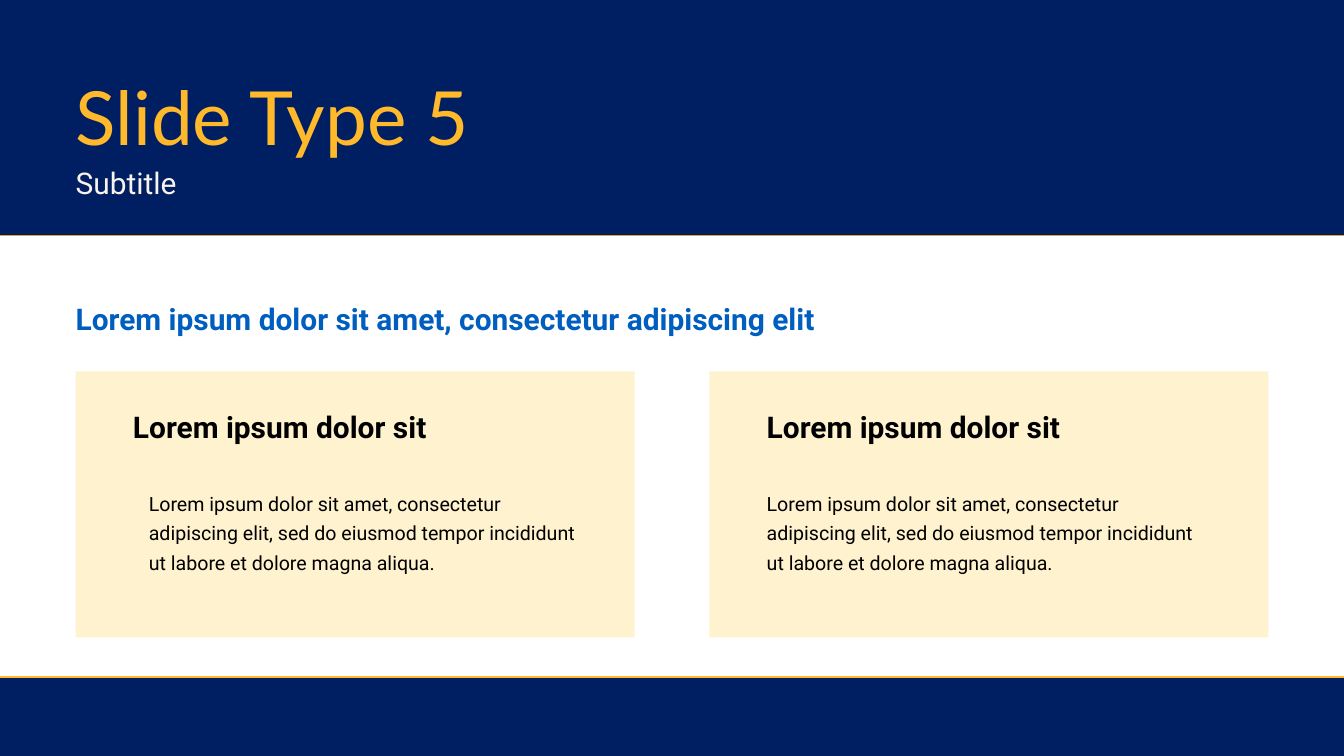
from pptx import Presentation
from pptx.dml.color import RGBColor
from pptx.enum.shapes import MSO_CONNECTOR, MSO_SHAPE
from pptx.enum.text import MSO_ANCHOR, MSO_AUTO_SIZE, PP_ALIGN
from pptx.oxml.ns import qn
from pptx.util import Pt
from lxml.etree import SubElement

NAVY = RGBColor(0x00, 0x1F, 0x63)
GOLD = RGBColor(0xFF, 0xB9, 0x2A)
CREAM = RGBColor(0xFF, 0xF2, 0xCE)
BLUE = RGBColor(0x00, 0x5F, 0xBE)
PALE = RGBColor(0xF8, 0xF4, 0xEB)
BLACK = RGBColor(0x00, 0x00, 0x00)

WIDTH, HEIGHT = 1440, 810
MARGIN, GAP = 81, 80
INNER = WIDTH - 2 * MARGIN
CARD = (INNER - GAP) / 2
HEAD = 252
FOOT = 726.5
INSET = 61.5

LEAD = "Lorem ipsum dolor sit amet, consectetur adipiscing elit"
LABEL = "Lorem ipsum dolor sit"
BODY = LEAD + ", sed do eiusmod tempor incididunt ut labore et dolore magna aliqua."


class Deck:
    font = "Roboto"

    def __init__(self):
        self.file = Presentation()
        self.file.slide_width = Pt(WIDTH)
        self.file.slide_height = Pt(HEIGHT)
        self.slide = self.file.slides.add_slide(self.file.slide_layouts[5])

    def rule(self, y):
        line = self.slide.shapes.add_connector(
            MSO_CONNECTOR.STRAIGHT, 0, Pt(y), Pt(WIDTH), Pt(y))
        line.line.color.rgb = GOLD
        line.line.width = Pt(2.25)
        SubElement(line.element.spPr, qn("a:effectLst"))

    def block(self, x, y, w, h, fill):
        shape = self.slide.shapes.add_shape(
            MSO_SHAPE.RECTANGLE, Pt(x), Pt(y), Pt(w), Pt(h))
        shape.shadow.inherit = False
        shape.fill.solid()
        shape.fill.fore_color.rgb = fill
        shape.line.fill.background()

    def style(self, frame, text, size, lead, color, bold, font, align):
        frame.margin_left = frame.margin_right = 0
        frame.margin_top = frame.margin_bottom = 0
        frame.word_wrap = True
        frame.auto_size = MSO_AUTO_SIZE.NONE
        frame.vertical_anchor = MSO_ANCHOR.TOP
        frame.text = text
        para = frame.paragraphs[0]
        para.alignment = align
        para.line_spacing = Pt(lead)
        para.font.name = font
        para.font.size = Pt(size)
        para.font.bold = bold
        para.font.color.rgb = color

    def text(self, x, y, w, h, text, size, lead, color,
             bold=False, align=PP_ALIGN.LEFT):
        box = self.slide.shapes.add_textbox(Pt(x), Pt(y), Pt(w), Pt(h))
        self.style(box.text_frame, text, size, lead, color, bold,
                   self.font, align)

    def title(self, x, y, w, h, text):
        title = self.slide.shapes.title
        title.left, title.top = Pt(x), Pt(y)
        title.width, title.height = Pt(w), Pt(h)
        self.style(title.text_frame, text, 80, 88, GOLD, False,
                   "Lato", PP_ALIGN.LEFT)
        title.element.getparent().append(title.element)

    def card(self, x, shift):
        self.block(x, 398, CARD, 285, CREAM)
        left = x + INSET
        self.text(left, 428.5, 465, 47, LABEL, 32, 48, BLACK, bold=True)
        self.text(left + shift, 520.5, 465, 93, BODY, 21, 31.5, BLACK)


def main():
    deck = Deck()
    deck.rule(HEAD)
    deck.block(0, 0, WIDTH, HEAD, NAVY)
    deck.title(MARGIN, 83.5, 857.5, 103, "Slide Type 5")
    deck.text(MARGIN, 176.5, INNER, 39, "Subtitle", 32, 38.4, PALE,
              align=PP_ALIGN.JUSTIFY)
    deck.text(MARGIN, 322, INNER, 39, LEAD, 32, 38.4, BLUE, bold=True)
    for col, shift in enumerate((17, 0)):
        deck.card(MARGIN + col * (CARD + GAP), shift)
    for y in (FOOT, FOOT - 0.7):
        deck.rule(y)
    deck.block(0, FOOT, WIDTH, HEIGHT - FOOT, NAVY)
    deck.file.save("out.pptx")


if __name__ == "__main__":
    main()
